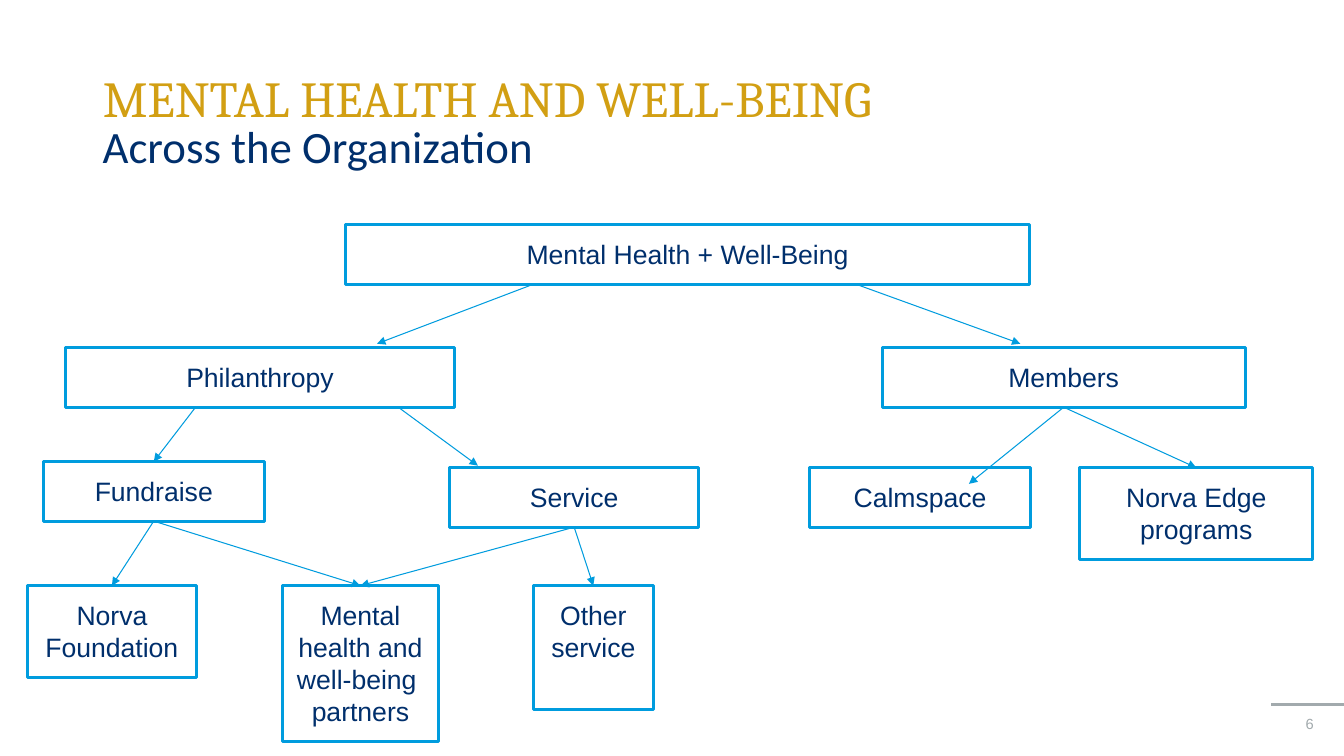
from lxml import etree
from pptx import Presentation
from pptx.dml.color import RGBColor
from pptx.enum.shapes import MSO_CONNECTOR, MSO_SHAPE
from pptx.enum.text import MSO_ANCHOR, MSO_AUTO_SIZE, PP_ALIGN
from pptx.oxml.ns import qn
from pptx.util import Inches, Pt

LEFT, CENTER, RIGHT = PP_ALIGN.LEFT, PP_ALIGN.CENTER, PP_ALIGN.RIGHT
TOP, MIDDLE = MSO_ANCHOR.TOP, MSO_ANCHOR.MIDDLE
NO_AUTOFIT = MSO_AUTO_SIZE.NONE
RECTANGLE = MSO_SHAPE.RECTANGLE
STRAIGHT = MSO_CONNECTOR.STRAIGHT
TITLE_ONLY = 5
TOP_SITE, BOTTOM_SITE = 0, 2  # connection sites of a rectangle

COLORS = {"gold": "D29F13", "navy": "002F6C", "blue": "009CDE", "gray": "A2AAAD"}

# Row tops and the usual box height, in inches
ROOT_TOP, BRANCH_TOP, FUND_TOP, PROGRAM_TOP, LEAF_TOP = 2.23, 3.45, 4.58, 4.64, 5.81
BOX_HEIGHT = 0.59

# key: (text, left, top, width, height)
BOXES = {
    "root": ("Mental Health + Well-Being", 3.43, ROOT_TOP, 6.78, BOX_HEIGHT),
    "philanthropy": ("Philanthropy", 0.65, BRANCH_TOP, 3.86, BOX_HEIGHT),
    "members": ("Members", 8.75, BRANCH_TOP, 3.6, BOX_HEIGHT),
    "fundraise": ("Fundraise", 0.43, FUND_TOP, 2.19, BOX_HEIGHT),
    "service": ("Service", 4.46, PROGRAM_TOP, 2.47, BOX_HEIGHT),
    "counseling": ("Calmspace", 8.03, PROGRAM_TOP, 2.19, BOX_HEIGHT),
    "edge": ("Norva Edge programs", 10.71, PROGRAM_TOP, 2.31, 0.91),
    "foundation": ("Norva Foundation", 0.27, LEAF_TOP, 1.68, 0.91),
    "partners": ("Mental health and well-being \npartners", 2.8, LEAF_TOP, 1.55, 1.55),
    "other": ("Other service", 5.29, LEAF_TOP, 1.19, 1.23),
}

# Each end is a box key (glued at its middle) or a free point
ARROWS = [
    ((5.29, 2.82), (3.74, 3.41)),
    ((8.49, 2.82), (10.12, 3.41)),
    ((1.94, 4.04), "fundraise"),
    ((3.95, 4.04), (4.74, 4.62)),
    ("members", (9.61, 4.8)),
    ("members", "edge"),
    ("fundraise", "foundation"),
    ("fundraise", "partners"),
    ("service", "partners"),
    ("service", "other"),
]


def rgb(name):
    return RGBColor.from_string(COLORS[name])


def write(shape, text, size=19, font="Arial", color="navy", align=LEFT,
          anchor=TOP, margins=(0.1, 0.05), spacing=None, before=0):
    frame = shape.text_frame
    frame.word_wrap = True
    frame.auto_size = NO_AUTOFIT
    frame.vertical_anchor = anchor
    frame.margin_left = frame.margin_right = Inches(margins[0])
    frame.margin_top = frame.margin_bottom = Inches(margins[1])
    frame.text = text
    for paragraph in frame.paragraphs:
        paragraph.alignment = align
        paragraph.space_before = Pt(before)
        if spacing:
            paragraph.line_spacing = spacing
        for run in paragraph.runs:
            run.font.size = Pt(size)
            run.font.name = font
            run.font.color.rgb = rgb(color)


def add_title(slide, text):
    title = slide.shapes.title
    title.left, title.top = Inches(0.92), Inches(0.4)
    title.width, title.height = Inches(11.5), Inches(1.2)
    write(title, text, size=36, font="Cambria", color="gold", anchor=MIDDLE, spacing=0.9)


def add_text(slide, text, left, top, width, height, **style):
    box = slide.shapes.add_textbox(Inches(left), Inches(top), Inches(width), Inches(height))
    write(box, text, **style)


def add_box(slide, text, left, top, width, height):
    box = slide.shapes.add_shape(
        RECTANGLE, Inches(left), Inches(top), Inches(width), Inches(height))
    box.shadow.inherit = False
    box.fill.background()
    box.line.color.rgb = rgb("blue")
    box.line.width = Pt(2.25)
    write(box, text, align=CENTER, margins=(0.13, 0.13))
    return box


def add_line(slide, start, end, color="blue", width=0.75):
    line = slide.shapes.add_connector(STRAIGHT, *map(Inches, start + end))
    line.line.color.rgb = rgb(color)
    line.line.width = Pt(width)
    etree.SubElement(line._element.spPr, qn("a:effectLst"))
    return line


def add_arrow(slide, boxes, start, end):
    origin = (0, 0)
    arrow = add_line(slide, origin if start in boxes else start,
                     origin if end in boxes else end)
    if start in boxes:
        arrow.begin_connect(boxes[start], BOTTOM_SITE)
    if end in boxes:
        arrow.end_connect(boxes[end], TOP_SITE)
    outline = arrow.line._get_or_add_ln()
    etree.SubElement(outline, qn("a:tailEnd"), type="triangle")


def main():
    deck = Presentation()
    deck.slide_width, deck.slide_height = Inches(13.33), Inches(7.5)
    slide = deck.slides.add_slide(deck.slide_layouts[TITLE_ONLY])

    # Heading
    add_title(slide, "MENTAL HEALTH AND WELL-BEING")
    add_text(slide, "Across the Organization", 0.92, 1.19, 11.5, 0.6,
             size=32, font="Calibri", spacing=0.9, before=10)

    # Organization tree
    boxes = {key: add_box(slide, *box) for key, box in BOXES.items()}
    for start, end in ARROWS:
        add_arrow(slide, boxes, start, end)

    # Page number and its rule
    add_line(slide, (12.61, 6.99), (13.33, 6.99), color="gray", width=2.75)
    add_text(slide, "6", 12.08, 7.04, 0.95, 0.28,
             size=10.5, color="gray", align=RIGHT, margins=(0, 0.05))

    deck.save("out.pptx")


if __name__ == "__main__":
    main()
